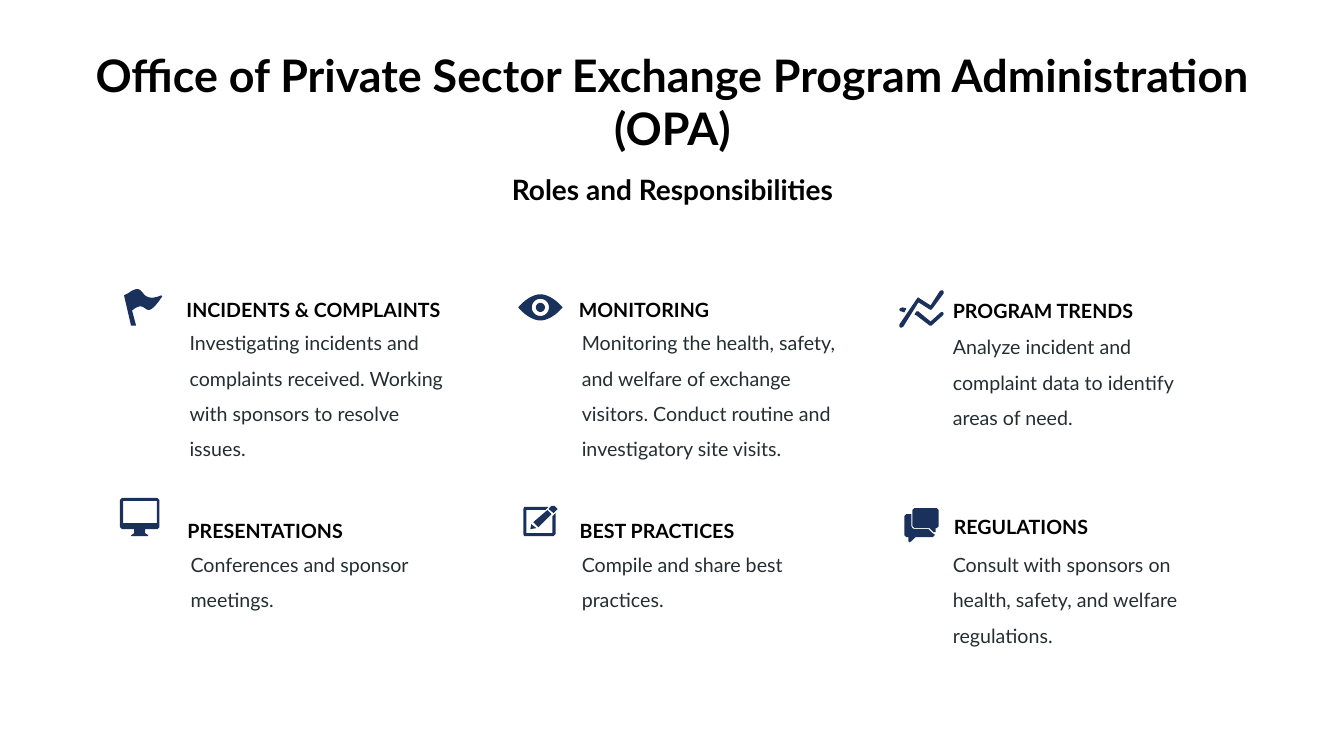
from math import cos, pi, sin

from pptx import Presentation
from pptx import util as u
from pptx.dml.color import RGBColor
from pptx.enum import text


class Theme:
    font = "Lato"
    black = RGBColor.from_string("000000")
    body = RGBColor.from_string("242E31")
    navy = RGBColor.from_string("1A315C")
    title_size, subtitle_size, text_size = 32, 20, 14
    inset = 0.05
    spacing = 1.5


# Outline helpers; icon units are hundredths of an inch
def bezier(p0, p1, p2, p3, steps=16):
    points = []
    for i in range(steps + 1):
        t = i / steps
        weights = ((1 - t) ** 3, 3 * t * (1 - t) ** 2, 3 * t * t * (1 - t), t ** 3)
        points.append(tuple(sum(w * p[axis] for w, p in zip(weights, (p0, p1, p2, p3)))
                            for axis in (0, 1)))
    return points


def circle(cx, cy, radius, steps=40):
    return [(cx + radius * cos(2 * pi * i / steps), cy + radius * sin(2 * pi * i / steps))
            for i in range(steps)]


def eye_outline(width, height):
    upper_left = bezier((0, height / 2), (5, 7), (14, 0), (width / 2, 0))
    upper = upper_left + [(width - x, y) for x, y in reversed(upper_left)]
    return upper + [(x, height - y) for x, y in reversed(upper)]


# Icons, each a list of closed contours
FLAG = [bezier((37, 6), (13, 16), (23, -10), (4, 4))
        + [(0, 6), (7, 36), (12, 36)]
        + bezier((8, 21), (25, 7), (18, 36), (38, 7))]
EYE = [eye_outline(44, 26), circle(22, 13, 8.5), circle(22, 13, 4.5)]
TRENDS = [
    [(2, 21), (5, 22), (7, 18), (3, 17), (0.5, 18), (0, 19), (0.5, 20.5)],
    [(41, 22), (31, 31), (20, 22), (19, 21), (17, 21), (15, 24), (17, 25), (30, 35),
     (32, 35), (43, 25), (44, 23.5), (43.5, 22), (42, 21.5)],
    [(19, 12), (30, 19), (31.5, 19.5), (33, 18), (44, 3), (44, 1), (43, 0), (41.5, 0),
     (40, 1), (31, 15), (20, 8), (18.5, 7), (17, 9), (0, 34), (0, 36), (1, 37),
     (2.5, 37), (4, 36)],
]
MONITOR = [
    [(2, 0), (37, 0), (39, 2), (39, 29), (37, 31), (25, 31), (25, 35), (28, 37), (28, 38),
     (11, 38), (11, 37), (14, 35), (14, 31), (2, 31), (0, 29), (0, 2)],
    [(3, 3), (36.5, 3), (36.5, 25), (3, 25)],
]
PENCIL = [
    [(33, 4), (30, 7), (25, 3), (28, 0), (31, 0), (33, 2), (34, 3)],
    [(8, 18), (13, 22), (7, 23)],
    [(28, 8), (15, 21), (10, 16), (24, 4)],
    [(3, 4), (3, 27), (29, 27), (29, 10), (32, 7), (32, 28), (30, 30), (1, 30), (0, 28),
     (0, 3), (1, 1), (25, 1), (22, 4)],
]
CHAT = [
    [(32, 20), (31, 20), (31, 24), (29, 24), (25, 20), (10, 20), (8, 18), (8, 2), (10, 0),
     (32, 0), (34, 2), (34, 18)],
    [(24, 21), (28, 25), (30, 26), (30, 27), (28, 29), (11, 29), (7, 33), (5, 34), (4, 33),
     (4, 29), (2, 29), (0, 27), (0, 8), (2, 6), (7, 6), (7, 18), (8, 20), (10, 21)],
]

COLUMNS, ROWS = (1.19, 5.14, 8.92), (2.79, 4.94)
BODY_SIZE, HEADING_HEIGHT = (2.72, 0.52), 0.34

# Heading, heading width, body, icon, then offsets of icon, heading and body in the cell
DUTIES = [
    ("INCIDENTS & COMPLAINTS", 2.77,
     "Investigating incidents and complaints received. Working with sponsors to resolve issues.",
     FLAG, (0.04, 0.08), (0.61, 0), (0.64, 0.33)),
    ("MONITORING", 2.38,
     "Monitoring the health, safety, and welfare of exchange visitors. "
     "Conduct routine and investigatory site visits.",
     EYE, (0, 0.13), (0.55, 0), (0.58, 0.33)),
    ("PROGRAM TRENDS", 2.38,
     "Analyze incident and complaint data to identify areas of need.",
     TRENDS, (0, 0.09), (0.48, 0.01), (0.48, 0.37)),
    ("PRESENTATIONS", 2.2,
     "Conferences and sponsor meetings.",
     MONITOR, (0, 0), (0.62, 0.04), (0.65, 0.38)),
    ("BEST PRACTICES", 2.2,
     "Compile and share best practices.",
     PENCIL, (0.05, 0.08), (0.56, 0.04), (0.58, 0.38)),
    ("REGULATIONS", 2.2,
     "Consult with sponsors on health, safety, and welfare regulations.",
     CHAT, (0.05, 0.1), (0.49, 0), (0.48, 0.38)),
]


def add_text(slide, box, words, size, color, bold=False, align=None, spacing=None):
    sp = slide.shapes.add_textbox(*(u.Inches(v) for v in box))
    tf = sp.text_frame
    tf.word_wrap = True
    tf.vertical_anchor = text.MSO_ANCHOR.TOP
    tf.margin_left = tf.margin_right = u.Inches(Theme.inset)
    tf.margin_top = tf.margin_bottom = u.Inches(Theme.inset)
    p = tf.paragraphs[0]
    p.text = words
    p.alignment = align
    p.line_spacing = spacing
    font = p.runs[0].font
    font.name, font.size, font.bold = Theme.font, u.Pt(size), bold
    font.color.rgb = color


def add_icon(slide, left, top, contours):
    outlines = [[(x * 10, y * 10) for x, y in contour] for contour in contours]
    builder = slide.shapes.build_freeform(*outlines[0][0], scale=u.Inches(1) / 1000)
    for i, outline in enumerate(outlines):
        if i:
            builder.move_to(*outline[0])
        builder.add_line_segments(outline[1:], close=True)
    sp = builder.convert_to_shape(u.Inches(left), u.Inches(top))
    sp.shadow.inherit = False
    sp.fill.solid()
    sp.fill.fore_color.rgb = Theme.navy
    sp.line.fill.background()


def add_header(slide, left, top, width):
    center = text.PP_ALIGN.CENTER
    add_text(slide, (left, top, width, 1.67),
             "Office of Private Sector Exchange Program Administration (OPA)",
             Theme.title_size, Theme.black, True, center)
    subtitle_width = 4.81
    add_text(slide, (left + (width - subtitle_width) / 2, top + 1.24, subtitle_width, 0.28),
             "Roles and Responsibilities", Theme.subtitle_size, Theme.black, True, center)


def add_duty(slide, left, top, duty):
    heading, width, body, icon, icon_at, heading_at, body_at = duty
    add_icon(slide, left + icon_at[0], top + icon_at[1], icon)
    add_text(slide, (left + heading_at[0], top + heading_at[1], width, HEADING_HEIGHT),
             heading, Theme.text_size, Theme.black, True,
             text.PP_ALIGN.JUSTIFY, Theme.spacing)
    add_text(slide, (left + body_at[0], top + body_at[1], *BODY_SIZE),
             body, Theme.text_size, Theme.body, spacing=Theme.spacing)


def main():
    prs = Presentation()
    prs.slide_width, prs.slide_height = u.Inches(13.33), u.Inches(7.5)
    slide = prs.slides.add_slide(prs.slide_layouts[6])
    add_header(slide, 0.67, 0.42, 12)
    # Grid of duties, row by row
    for i, duty in enumerate(DUTIES):
        row, column = divmod(i, len(COLUMNS))
        add_duty(slide, COLUMNS[column], ROWS[row], duty)
    prs.save("out.pptx")


if __name__ == "__main__":
    main()
